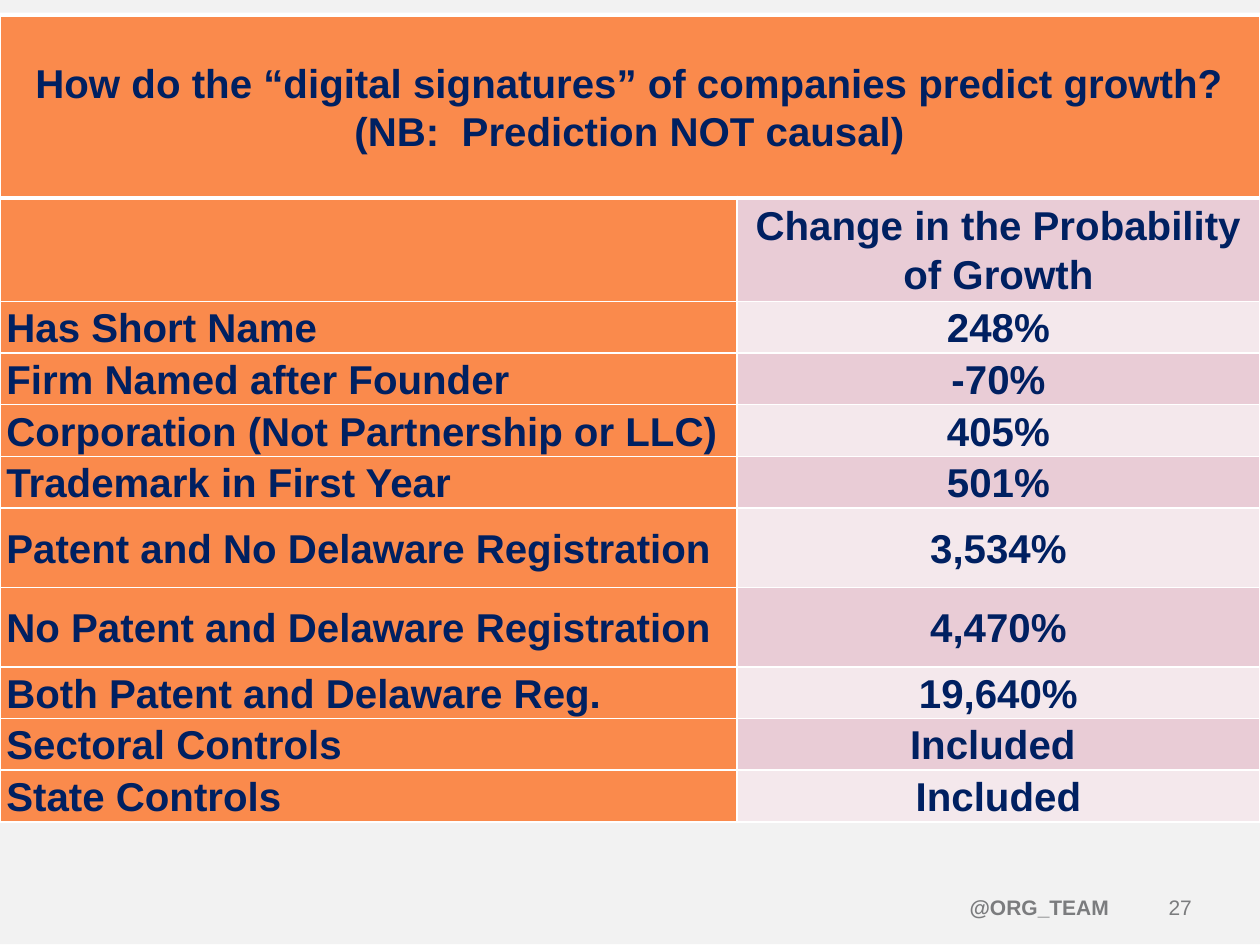
from lxml.etree import SubElement
from pptx import Presentation
from pptx.dml.color import RGBColor
from pptx.enum.shapes import MSO_SHAPE as Shape
from pptx.enum.text import MSO_ANCHOR as Anchor, PP_ALIGN as Align
from pptx.oxml import parse_xml
from pptx.oxml.ns import nsdecls, qn
from pptx.util import Pt

NAVY, ORANGE, GREY, BAND = "002061", "FA8A4C", "7B7C7E", "F2F2F2"
STRIPES = ("E9CCD6", "F4E8EC")
COLUMN_WIDTHS = (421.2, 298.8)
HEADER_HEIGHT, SUBHEAD_HEIGHT, ROW_HEIGHT, TALL_HEIGHT = 103.7, 59, 29.5, 45.4

HEADING = (
    "How do the “digital signatures” of companies predict growth?",
    "(NB:  Prediction NOT causal)",
)
ROWS = (
    ("", "Change in the Probability of Growth", SUBHEAD_HEIGHT),
    ("Has Short Name", "248%", ROW_HEIGHT),
    ("Firm Named after Founder", "-70%", ROW_HEIGHT),
    ("Corporation (Not Partnership or LLC)", "405%", ROW_HEIGHT),
    ("Trademark in First Year", "501%", ROW_HEIGHT),
    ("Patent and No Delaware Registration", "3,534%", TALL_HEIGHT),
    ("No Patent and Delaware Registration", "4,470%", TALL_HEIGHT),
    ("Both Patent and Delaware Reg.", "19,640%", ROW_HEIGHT),
    ("Sectoral Controls", "Included ", ROW_HEIGHT),
    ("State Controls", "Included", ROW_HEIGHT),
)


def color(value):
    """Turn a hex string into a colour."""
    return RGBColor.from_string(value)


def style_paragraph(para, size, tint, align, bold):
    """Set the font and alignment of a paragraph."""
    para.alignment = align
    para.font.name = "Arial"
    para.font.size = Pt(size)
    para.font.bold = bold
    para.font.color.rgb = color(tint)


def add_band(page, top, height):
    """Add a full-width grey band."""
    band = page.shapes.add_shape(Shape.RECTANGLE, 0, Pt(top), Pt(720), Pt(height))
    band.shadow.inherit = False
    band.fill.solid()
    band.fill.fore_color.rgb = color(BAND)
    band.line.fill.background()


def add_footer(page, left, width, text, bold=False):
    """Add a right-aligned footer text."""
    box = page.shapes.add_textbox(Pt(left), Pt(504), Pt(width), Pt(28.8))
    frame = box.text_frame
    frame.word_wrap = True
    frame.vertical_anchor = Anchor.MIDDLE
    frame.text = text
    style_paragraph(frame.paragraphs[0], 12, GREY, Align.RIGHT, bold)


def set_borders(cell, top=1, bottom=1):
    """Draw white borders around a cell."""
    properties = cell._tc.get_or_add_tcPr()
    widths = {"lnL": 1, "lnR": 1, "lnT": top, "lnB": bottom}
    for index, (side, width) in enumerate(widths.items()):
        line = parse_xml(f'<a:{side} {nsdecls("a")} w="{Pt(width)}"/>')
        fill = SubElement(line, qn("a:solidFill"))
        SubElement(fill, qn("a:srgbClr"), val="FFFFFF")
        properties.insert(index, line)


def fill_cell(cell, text, fill, align):
    """Write a cell's text and set its look."""
    cell.text = text
    cell.vertical_anchor = Anchor.MIDDLE
    cell.margin_left = cell.margin_right = Pt(3.6)
    cell.margin_top = cell.margin_bottom = 0
    cell.fill.solid()
    cell.fill.fore_color.rgb = color(fill)
    for para in cell.text_frame.paragraphs:
        style_paragraph(para, 23, NAVY, align, True)
        para.line_spacing = 1.07


def add_growth_table(page):
    """Add the table of growth predictors."""
    heights = [HEADER_HEIGHT] + [height for _, _, height in ROWS]
    frame = page.shapes.add_table(
        len(heights), 2, 0, Pt(9.4), Pt(sum(COLUMN_WIDTHS)), Pt(sum(heights)))
    table = frame.table
    for column, width in zip(table.columns, COLUMN_WIDTHS):
        column.width = Pt(width)
    for row, height in zip(table.rows, heights):
        row.height = Pt(height)

    header = table.cell(0, 0)
    header.merge(table.cell(0, 1))
    fill_cell(header, "\n".join(HEADING), ORANGE, Align.CENTER)
    for column in range(2):
        set_borders(table.cell(0, column), bottom=3)

    for index, (label, value, _) in enumerate(ROWS):
        name_cell, value_cell = table.rows[index + 1].cells
        fill_cell(name_cell, label, ORANGE, Align.JUSTIFY)
        fill_cell(value_cell, value, STRIPES[index % 2], Align.CENTER)
        for cell in (name_cell, value_cell):
            set_borders(cell, top=1 if index else 3)


def main():
    """Build the slide and save the deck."""
    deck = Presentation()
    deck.slide_width, deck.slide_height = Pt(720), Pt(540)
    page = deck.slides.add_slide(deck.slide_layouts[6])
    add_band(page, 467.5, 72)
    add_band(page, 0, 7.2)
    add_footer(page, 397.4, 243.4, "@ORG_TEAM", bold=True)
    add_footer(page, 640, 48.2, "27")
    add_growth_table(page)
    deck.save("out.pptx")


if __name__ == "__main__":
    main()
